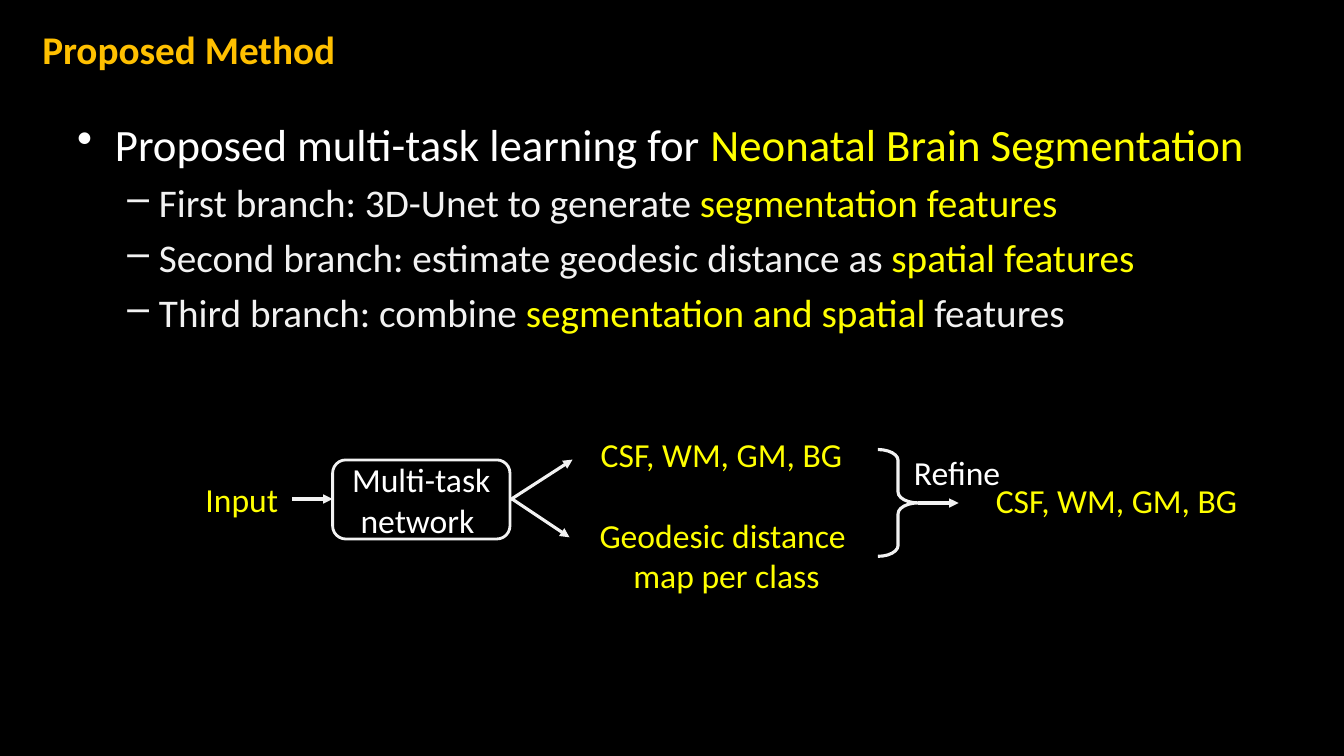
from dataclasses import dataclass

from lxml import etree
from pptx import Presentation
from pptx.dml.color import RGBColor
from pptx.enum.shapes import MSO_CONNECTOR, MSO_SHAPE
from pptx.enum.text import MSO_ANCHOR, MSO_AUTO_SIZE, PP_ALIGN
from pptx.oxml.ns import qn
from pptx.util import Pt

STRAIGHT = MSO_CONNECTOR.STRAIGHT
ROUNDED = MSO_SHAPE.ROUNDED_RECTANGLE
BRACE = MSO_SHAPE.RIGHT_BRACE
MIDDLE = MSO_ANCHOR.MIDDLE
FIXED, GROW = MSO_AUTO_SIZE.NONE, MSO_AUTO_SIZE.SHAPE_TO_FIT_TEXT
LEFT, CENTER = PP_ALIGN.LEFT, PP_ALIGN.CENTER

FONT = "Calibri"
LABEL_SIZE = 24
COLORS = {
    "background": "000000",
    "title": "FFC000",
    "main": "FFFFFF",
    "soft": "F2F2F2",
    "highlight": "FFFF00",
}


@dataclass(frozen=True)
class Level:
    bullet: str
    size: float
    margin: float
    hanging: float
    space_before: float


@dataclass(frozen=True)
class Point:
    level: Level
    runs: tuple[tuple[str, str], ...]


@dataclass(frozen=True)
class Label:
    lines: tuple[str, ...]
    color: str
    left: float
    top: float
    width: float
    height: float = 36
    wrap: bool = False
    align: PP_ALIGN = LEFT


@dataclass(frozen=True)
class Arrow:
    start: tuple[float, float]
    end: tuple[float, float]


CLAIM = Level("•", 32, 27, 27, 0)
BRANCH = Level("–", 28, 58.5, 22.5, 5.6)

POINTS = (
    Point(CLAIM, (("Proposed multi-task learning for ", "main"),
                  ("Neonatal Brain Segmentation", "highlight"))),
    Point(BRANCH, (("First branch: 3D-Unet to generate ", "soft"),
                   ("segmentation features", "highlight"))),
    Point(BRANCH, (("Second branch: estimate geodesic distance as ", "soft"),
                   ("spatial features", "highlight"))),
    Point(BRANCH, (("Third branch: combine ", "soft"),
                   ("segmentation and spatial ", "highlight"),
                   ("features", "soft"))),
)

TISSUES = ("CSF, WM, GM, BG",)
LABELS = (
    Label(("Input",), "highlight", 139.7, 338.4, 67),
    Label(TISSUES, "highlight", 422, 306.7, 188.6),
    Label(("Geodesic distance", " map per class"), "highlight",
          396, 364.3, 240.5, 65.5, True, CENTER),
    Label(TISSUES, "highlight", 704.2, 339.1, 188.6),
    Label(("Refine",), "main", 645.8, 319, 77),
)

ARROWS = (
    Arrow((208.8, 356.4), (237.6, 356.4)),
    Arrow((364.5, 357), (409, 328.3)),
    Arrow((365.8, 356.4), (406.8, 383.8)),
    Arrow((656, 359.3), (684.7, 359.3)),
)


def color(name: str) -> RGBColor:
    return RGBColor.from_string(COLORS[name])


def write(paragraph, text: str, *, size: float, tone: str,
          bold: bool = False) -> None:
    run = paragraph.add_run()
    run.text = text
    run.font.name = FONT
    run.font.size = Pt(size)
    run.font.bold = bold
    run.font.color.rgb = color(tone)


def next_paragraph(frame, index: int):
    return frame.add_paragraph() if index else frame.paragraphs[0]


def draw_title(slide, text: str) -> None:
    title = slide.shapes.title
    title.left, title.top = Pt(23), Pt(-10)
    title.width, title.height = Pt(909), Pt(90)
    frame = title.text_frame
    frame.auto_size = FIXED
    frame.vertical_anchor = MIDDLE
    frame.paragraphs[0].alignment = LEFT
    write(frame.paragraphs[0], text, size=28, tone="title", bold=True)


def draw_points(slide, points: tuple[Point, ...]) -> None:
    body = slide.shapes.add_textbox(Pt(48), Pt(80), Pt(864), Pt(384))
    frame = body.text_frame
    frame.word_wrap = True
    for index, point in enumerate(points):
        level = point.level
        paragraph = next_paragraph(frame, index)
        properties = paragraph._p.get_or_add_pPr()
        properties.set("marL", str(Pt(level.margin)))
        properties.set("indent", str(-Pt(level.hanging)))
        etree.SubElement(properties, qn("a:buChar"), char=level.bullet)
        paragraph.level = 0 if level is CLAIM else 1
        paragraph.space_before = Pt(level.space_before)
        for text, tone in point.runs:
            write(paragraph, text, size=level.size, tone=tone)


def draw_label(slide, label: Label) -> None:
    box = slide.shapes.add_textbox(Pt(label.left), Pt(label.top),
                                   Pt(label.width), Pt(label.height))
    frame = box.text_frame
    frame.word_wrap = label.wrap
    frame.auto_size = GROW
    for index, line in enumerate(label.lines):
        paragraph = next_paragraph(frame, index)
        paragraph.alignment = label.align
        write(paragraph, line, size=LABEL_SIZE, tone=label.color)


def draw_arrow(slide, arrow: Arrow) -> None:
    connector = slide.shapes.add_connector(
        STRAIGHT, *map(Pt, arrow.start), *map(Pt, arrow.end))
    connector.line.color.rgb = color("soft")
    connector.line.width = Pt(2.25)
    outline = connector.line._get_or_add_ln()
    etree.SubElement(outline, qn("a:tailEnd"), type="triangle")
    etree.SubElement(connector._element.spPr, qn("a:effectLst"))


def draw_outline(slide, preset: MSO_SHAPE, left: float, top: float,
                 width: float, height: float, weight: float):
    shape = slide.shapes.add_shape(preset, Pt(left), Pt(top),
                                   Pt(width), Pt(height))
    shape.shadow.inherit = False
    shape.fill.background()
    shape.line.color.rgb = color("soft")
    shape.line.width = Pt(weight)
    return shape


def main() -> None:
    deck = Presentation()
    deck.slide_width, deck.slide_height = Pt(960), Pt(540)
    slide = deck.slides.add_slide(deck.slide_layouts[5])
    slide.background.fill.solid()
    slide.background.fill.fore_color.rgb = color("background")

    draw_title(slide, "Proposed Method")
    draw_points(slide, POINTS)

    network = draw_outline(slide, ROUNDED, 237.6, 328.5, 126.7, 56.5, 2)
    network.text_frame.word_wrap = True
    network.text_frame.vertical_anchor = MIDDLE
    caption = network.text_frame.paragraphs[0]
    caption.alignment = CENTER
    write(caption, "Multi-task network ", size=LABEL_SIZE, tone="main")

    merge = draw_outline(slide, BRACE, 627.1, 321.1, 28.8, 76.3, 2.25)
    merge.adjustments[0] = 0.27

    for arrow in ARROWS:
        draw_arrow(slide, arrow)
    for label in LABELS:
        draw_label(slide, label)
    deck.save("out.pptx")


if __name__ == "__main__":
    main()
